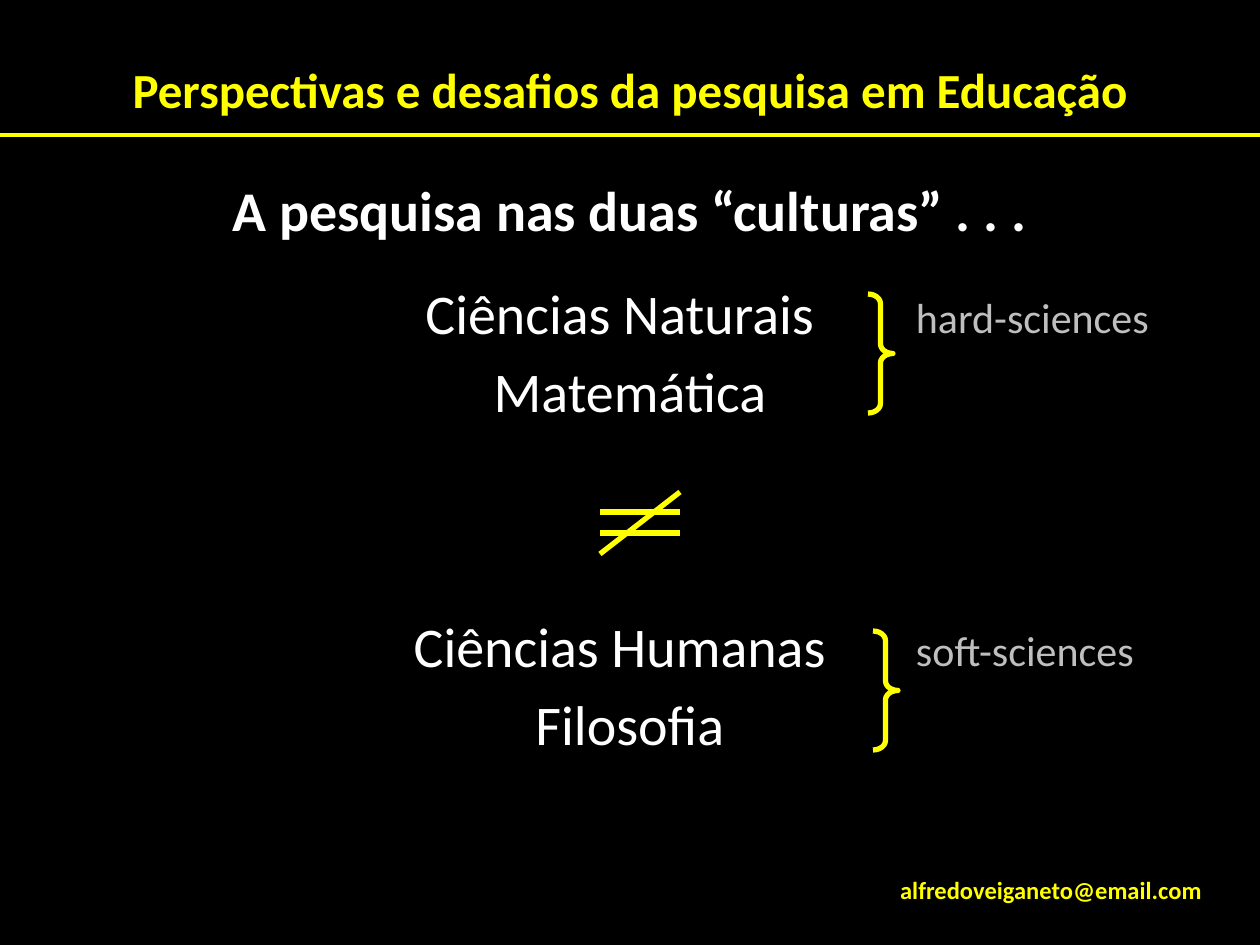
from dataclasses import dataclass

import pptx
import pptx.dml.color
import pptx.enum.shapes
import pptx.enum.text
import pptx.oxml.ns
import pptx.util
from lxml import etree

PX = 914400 / 126
BLACK = pptx.dml.color.RGBColor(0x00, 0x00, 0x00)
WHITE = pptx.dml.color.RGBColor(0xFF, 0xFF, 0xFF)
YELLOW = pptx.dml.color.RGBColor(0xFF, 0xFF, 0x00)
GRAY = pptx.dml.color.RGBColor(0xBF, 0xBF, 0xBF)
LEFT = pptx.enum.text.PP_ALIGN.LEFT
CENTER = pptx.enum.text.PP_ALIGN.CENTER


@dataclass
class Culture:
    field: str
    discipline: str
    label: str
    y: int  # middle of the first line
    brace_x: int
    brace_y: int


CULTURES = [
    Culture("Ciências Naturais", "Matemática", "hard-sciences", 312, 868, 294),
    Culture("Ciências Humanas", "Filosofia", "soft-sciences", 645, 873, 631),
]


def px(n: int) -> int:
    return round(n * PX)


def add_text(s, text: str, x: int, y: int, w: int, *, size: int = 32,
             color=WHITE, bold: bool = False, align=CENTER) -> None:
    """Place one line of text with its middle at y."""
    h = size * 2 + 4
    sp = s.shapes.add_textbox(px(x), px(y - h // 2), px(w), px(h))
    tf = sp.text_frame
    tf.word_wrap = True
    tf.vertical_anchor = pptx.enum.text.MSO_ANCHOR.MIDDLE
    tf.margin_left = tf.margin_right = tf.margin_top = tf.margin_bottom = 0
    p = tf.paragraphs[0]
    p.alignment = align
    r = p.add_run()
    r.text = text
    r.font.name = "Calibri"
    r.font.size = pptx.util.Pt(size)
    r.font.bold = bold
    r.font.color.rgb = color


def add_line(s, x1: int, y1: int, x2: int, y2: int, width: float = 3) -> None:
    c = s.shapes.add_connector(pptx.enum.shapes.MSO_CONNECTOR.STRAIGHT,
                               px(x1), px(y1), px(x2), px(y2))
    c.line.color.rgb = YELLOW
    c.line.width = pptx.util.Pt(width)
    etree.SubElement(c._element.spPr, pptx.oxml.ns.qn("a:effectLst"))


def add_brace(s, x: int, y: int) -> None:
    sp = s.shapes.add_shape(pptx.enum.shapes.MSO_SHAPE.RIGHT_BRACE,
                            px(x), px(y), px(25), px(119))
    sp.adjustments[0] = 0.38
    sp.adjustments[1] = 0.5
    sp.shadow.inherit = False
    sp.fill.background()
    sp.line.color.rgb = YELLOW
    sp.line.width = pptx.util.Pt(3)


def add_culture(s, c: Culture) -> None:
    add_text(s, c.field, 400, c.y, 440)
    add_text(s, c.discipline, 400, c.y + 78, 460)
    add_text(s, c.label, 916, c.y + 5, 280, size=24, color=GRAY, align=LEFT)
    add_brace(s, c.brace_x, c.brace_y)


def main() -> None:
    prs = pptx.Presentation()
    prs.slide_width, prs.slide_height = px(1260), px(945)
    s = prs.slides.add_slide(prs.slide_layouts[6])
    s.background.fill.solid()
    s.background.fill.fore_color.rgb = BLACK

    # Title, rule and heading
    add_text(s, "Perspectivas e desafios da pesquisa em Educação", 95, 89, 1070,
             size=28, color=YELLOW, bold=True)
    add_line(s, 0, 135, 1260, 135, 2.25)
    add_text(s, "A pesquisa nas duas “culturas” . . .", 35, 209, 1190, bold=True)

    # The two cultures
    for culture in CULTURES:
        add_culture(s, culture)

    # Not-equal sign
    for y in (512, 533):
        add_line(s, 600, y, 680, y)
    add_line(s, 600, 554, 680, 492)

    # Contact
    add_text(s, "alfredoveiganeto@email.com", 882, 890, 338,
             size=14, color=YELLOW, bold=True)

    prs.save("out.pptx")


if __name__ == "__main__":
    main()
